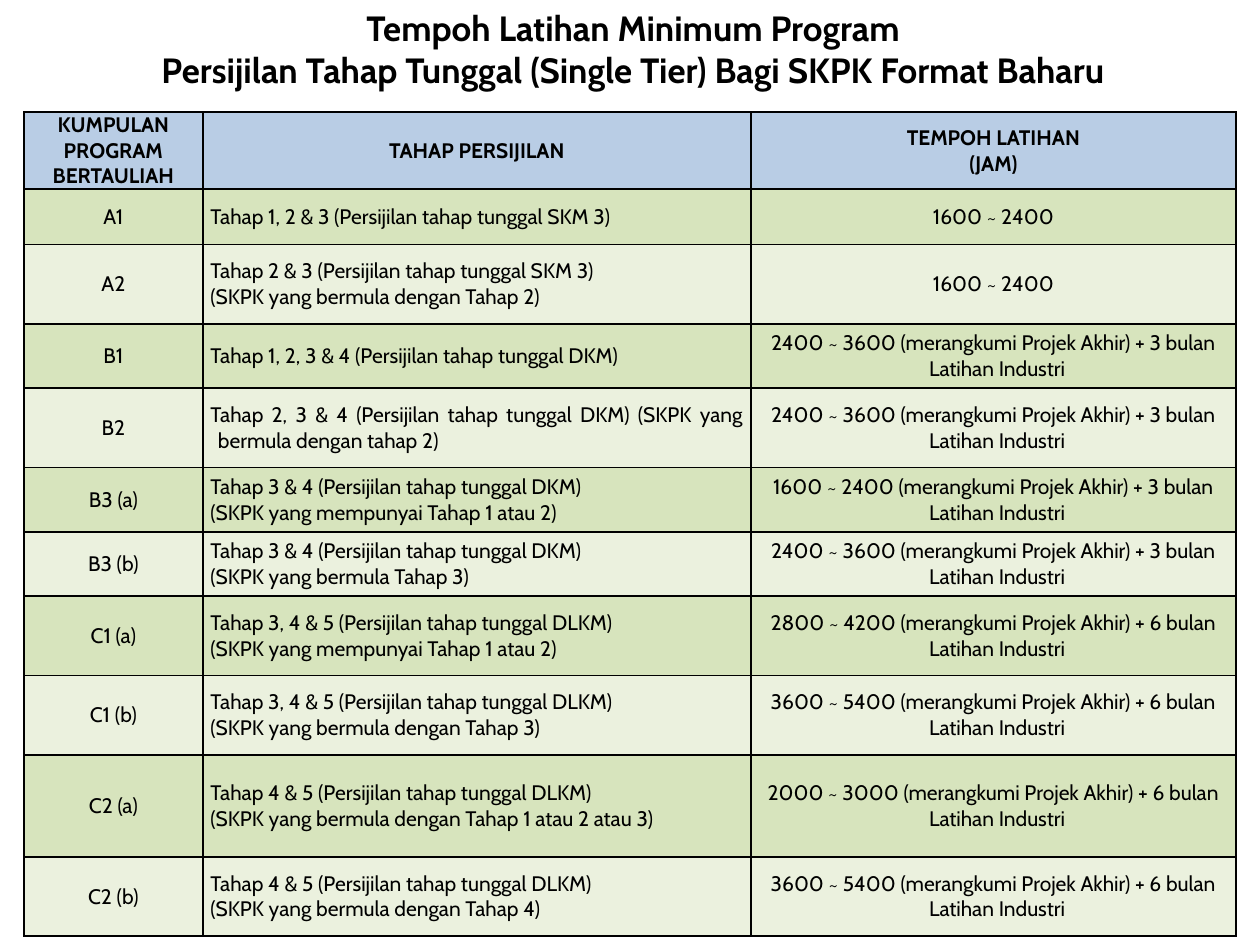
import pptx
import pptx.util
import pptx.dml.color
import pptx.enum.text
import pptx.oxml
import pptx.oxml.ns

Inches, Pt = pptx.util.Inches, pptx.util.Pt
ALIGN = pptx.enum.text.PP_ALIGN
ANCHOR = pptx.enum.text.MSO_ANCHOR

# Content
FONT = "Cabin"
COLORS = {"ink": "000000", "head": "B9CDE5", "odd": "D7E4BD", "even": "EBF1DE"}
TITLE = ["Tempoh Latihan Minimum Program",
         "Persijilan Tahap Tunggal (Single Tier) Bagi SKPK Format Baharu"]
HEAD = [["KUMPULAN PROGRAM BERTAULIAH"], ["TAHAP PERSIJILAN"],
        ["TEMPOH LATIHAN", "(JAM)"]]
# Group, level lines, hours, months in industry, row height
ROWS = [
    ("A1", ["Tahap 1, 2 & 3 (Persijilan tahap tunggal SKM 3)"],
     "1600 ~ 2400", 0, 0.44),
    ("A2", ["Tahap 2 & 3 (Persijilan tahap tunggal SKM 3)",
            "(SKPK yang bermula dengan Tahap 2)"], "1600 ~ 2400", 0, 0.63),
    ("B1", ["Tahap 1, 2, 3 & 4 (Persijilan tahap tunggal DKM)"],
     "2400 ~ 3600", 3, 0.51),
    ("B2", ["Tahap 2, 3 & 4 (Persijilan tahap tunggal DKM) "
            "(SKPK yang bermula dengan tahap 2)"], "2400 ~ 3600", 3, 0.63),
    ("B3 (a)", ["Tahap 3 & 4 (Persijilan tahap tunggal DKM)",
                "(SKPK yang mempunyai Tahap 1 atau 2)"], "1600 ~ 2400", 3, 0.51),
    ("B3 (b)", ["Tahap 3 & 4 (Persijilan tahap tunggal DKM)",
                "(SKPK yang bermula Tahap 3)"], "2400 ~ 3600", 3, 0.51),
    ("C1 (a)", ["Tahap 3, 4 & 5 (Persijilan tahap tunggal DLKM)",
                "(SKPK yang mempunyai Tahap 1 atau 2)"], "2800 ~ 4200", 6, 0.63),
    ("C1 (b)", ["Tahap 3, 4 & 5 (Persijilan tahap tunggal DLKM)",
                "(SKPK yang bermula dengan Tahap 3)"], "3600 ~ 5400", 6, 0.63),
    ("C2 (a)", ["Tahap 4 & 5 (Persijilan tahap tunggal DLKM)",
                "(SKPK yang bermula dengan Tahap 1 atau 2 atau 3)"],
     "2000 ~ 3000", 6, 0.81),
    ("C2 (b)", ["Tahap 4 & 5 (Persijilan tahap tunggal DLKM)",
                "(SKPK yang bermula dengan Tahap 4)"], "3600 ~ 5400", 6, 0.63),
]
WIDTHS = [1.42, 4.35, 3.85]
HEAD_HIGH = 0.6


def rgb(name):
    return pptx.dml.color.RGBColor.from_string(COLORS[name])


def write(frame, lines, size, bold, align, hang=0):
    """Put each line in its own paragraph, with a hanging indent."""
    frame.word_wrap = True
    for i, line in enumerate(lines):
        para = frame.add_paragraph() if i else frame.paragraphs[0]
        para.alignment = align
        if hang:
            props = para._p.get_or_add_pPr()
            props.set("marL", str(Inches(hang)))
            props.set("indent", str(-Inches(hang)))
        run = para.add_run()
        run.text = line
        font = run.font
        font.name, font.size, font.bold = FONT, Pt(size), bold
        font.color.rgb = rgb("ink")


def border(cell):
    """Draw a thin line on all four sides."""
    props = cell._tc.get_or_add_tcPr()
    for side in ("lnL", "lnR", "lnT", "lnB"):
        props.append(pptx.oxml.parse_xml(
            f'<a:{side} {pptx.oxml.ns.nsdecls("a")} w="{Pt(1)}"><a:solidFill>'
            f'<a:srgbClr val="{COLORS["ink"]}"/></a:solidFill></a:{side}>'))


def fill_cell(cell, lines, col, fill, bold, align):
    side, edge = (0.06, 0.03) if col else (0, 0)
    cell.margin_left = cell.margin_right = Inches(side)
    cell.margin_top = cell.margin_bottom = Inches(edge)
    cell.vertical_anchor = ANCHOR.TOP if bold and not col else ANCHOR.MIDDLE
    border(cell)
    cell.fill.solid()
    cell.fill.fore_color.rgb = rgb(fill)
    write(cell.text_frame, lines, 12, bold, align, side)


def main():
    deck = pptx.Presentation()
    deck.slide_width, deck.slide_height = Inches(10), Inches(7.5)
    slide = deck.slides.add_slide(deck.slide_layouts[5])

    # Title
    title = slide.shapes.title
    title.left, title.top = Inches(0), Inches(0.05)
    title.width, title.height = Inches(10), Inches(0.67)
    frame = title.text_frame
    frame.margin_left, frame.margin_right = Inches(0.1), Inches(0.05)
    frame.margin_top = frame.margin_bottom = 0
    frame.vertical_anchor = ANCHOR.TOP
    frame.auto_size = pptx.enum.text.MSO_AUTO_SIZE.NONE
    write(frame, TITLE, 20, True, ALIGN.CENTER)

    # Table grid
    highs = [HEAD_HIGH] + [row[-1] for row in ROWS]
    table = slide.shapes.add_table(
        len(highs), len(WIDTHS), Inches(0.19), Inches(0.89),
        Inches(sum(WIDTHS)), Inches(sum(highs))).table
    for col, wide in zip(table.columns, WIDTHS):
        col.width = Inches(wide)
    for row, high in zip(table.rows, highs):
        row.height = Inches(high)

    # Header row
    for c, lines in enumerate(HEAD):
        fill_cell(table.cell(0, c), lines, c, "head", True, ALIGN.CENTER)

    # Body rows
    for r, (group, level, hours, months, _) in enumerate(ROWS, 1):
        if months:
            hours += f" (merangkumi Projek Akhir) + {months} bulan Latihan Industri"
        for c, lines in enumerate([[group], level, [hours]]):
            fill_cell(table.cell(r, c), lines, c, "odd" if r % 2 else "even",
                      False, ALIGN.JUSTIFY if c == 1 else ALIGN.CENTER)

    deck.save("out.pptx")


if __name__ == "__main__":
    main()
